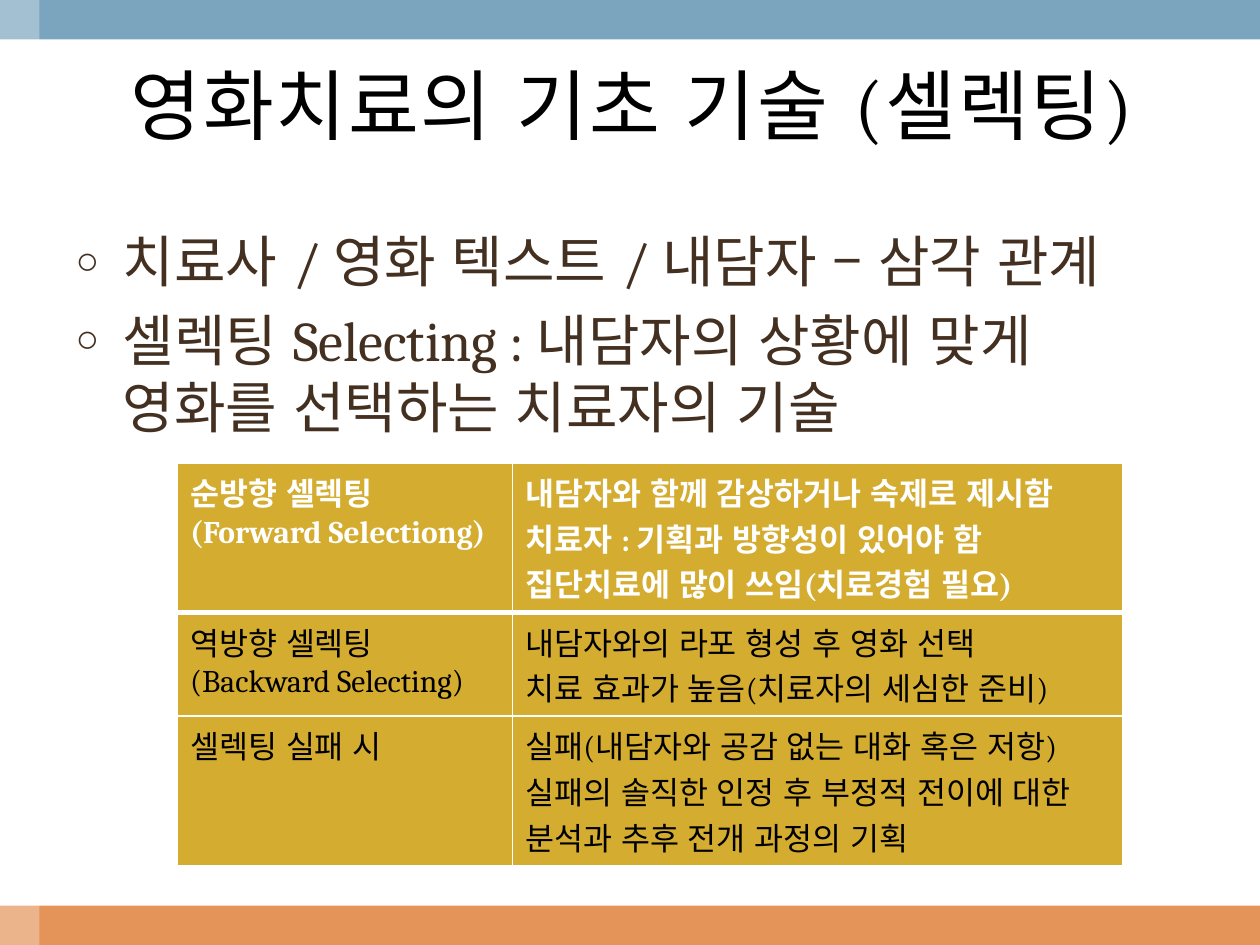
from lxml import etree
from pptx import Presentation
from pptx import util as u
from pptx.dml import color
from pptx.enum import lang, shapes, text
from pptx.oxml import ns

FONT = "Cambria"
WHITE, BLACK, BROWN = "FFFFFF", "000000", "433021"
BLUE, ORANGE, GOLD = "7BA5BE", "E49458", "D4AC30"
WIDTH, HEIGHT, BAND = 720, 540, 22.5


def rgb(value):
    return color.RGBColor.from_string(value)


def child(parent, tag, **attributes):
    return etree.SubElement(parent, ns.qn(tag), attributes)


class Deck:
    def __init__(self, slide):
        self.slide = slide
        self.bands = 0

    def place(self, item, left, top, width, height):
        item.left, item.top = u.Pt(left), u.Pt(top)
        item.width, item.height = u.Pt(width), u.Pt(height)

    def run(self, paragraph, words, size, ink, bold=False):
        run = paragraph.add_run()
        run.text = words
        font = run.font
        font.name, font.size, font.bold = FONT, u.Pt(size), bold
        font.color.rgb = rgb(ink)
        font.language_id = lang.MSO_LANGUAGE_ID.KOREAN
        return run

    def paragraphs(self, frame, lines, size, ink, bold=False):
        for i, words in enumerate(lines):
            paragraph = frame.paragraphs[0] if i == 0 else frame.add_paragraph()
            self.run(paragraph, words, size, ink, bold)

    def band(self, left, top, width, height, fill, opacity=100):
        band = self.slide.shapes.add_shape(
            shapes.MSO_SHAPE.RECTANGLE, *map(u.Pt, (left, top, width, height)))
        band.shadow.inherit = False
        band.line.fill.background()
        band.fill.solid()
        band.fill.fore_color.rgb = rgb(fill)
        if opacity < 100:
            tint = next(band._element.spPr.iter(ns.qn("a:srgbClr")))
            child(tint, "a:alpha", val=str(opacity * 1000))
        # Bands lie behind the placeholders
        self.slide.shapes._spTree.insert(2 + self.bands, band._element)
        self.bands += 1

    def title(self, words, *box):
        title = self.slide.shapes.title
        self.place(title, *box)
        frame = title.text_frame
        frame.auto_size = text.MSO_AUTO_SIZE.NONE
        frame.vertical_anchor = text.MSO_ANCHOR.MIDDLE
        frame.paragraphs[0].alignment = text.PP_ALIGN.CENTER
        run = self.run(frame.paragraphs[0], words, 44, BLACK)
        run.font._element.set("spc", "100")

    def bullets(self, lines, *box):
        body = self.slide.placeholders[1]
        self.place(body, *box)
        frame = body.text_frame
        frame.auto_size = text.MSO_AUTO_SIZE.NONE
        self.paragraphs(frame, lines, 32, BROWN)
        for paragraph in frame.paragraphs:
            props = paragraph._p.get_or_add_pPr()
            props.set("marL", str(u.Pt(27)))
            props.set("indent", str(u.Pt(-27)))
            child(child(props, "a:spcBef"), "a:spcPct", val="20000")
            child(props, "a:buSzPct", val="70000")
            child(props, "a:buChar", char="○")

    def borders(self, cell, **widths):
        props = cell._tc.get_or_add_tcPr()
        for i, (side, width) in enumerate(widths.items()):
            line = etree.Element(ns.qn("a:" + side), w=str(u.Pt(width)))
            child(child(line, "a:solidFill"), "a:srgbClr", val=WHITE)
            props.insert(i, line)

    def table(self, rows, left, top, columns, heights):
        table = self.slide.shapes.add_table(
            len(rows), len(columns),
            *map(u.Pt, (left, top, sum(columns), sum(heights)))).table
        for column, width in zip(table.columns, columns):
            column.width = u.Pt(width)
        for r, (row, height) in enumerate(zip(rows, heights)):
            table.rows[r].height = u.Pt(height)
            header = r == 0
            for c, lines in enumerate(row):
                cell = table.cell(r, c)
                cell.fill.solid()
                cell.fill.fore_color.rgb = rgb(GOLD)
                self.paragraphs(cell.text_frame, lines, 18,
                                WHITE if header else BLACK, header)
                self.borders(cell, lnL=1, lnR=1, lnT=3 if r == 1 else 1,
                             lnB=3 if header else 1)


presentation = Presentation()
presentation.slide_width, presentation.slide_height = u.Pt(WIDTH), u.Pt(HEIGHT)
deck = Deck(presentation.slides.add_slide(presentation.slide_layouts[1]))

# Colour bands with a pale strip down the left edge
deck.band(0, HEIGHT - BAND, WIDTH, BAND, ORANGE)
deck.band(0, 0, WIDTH, BAND, BLUE)
deck.band(0, 0, BAND, HEIGHT, WHITE, opacity=30)

# Title and main points
deck.title("영화치료의 기초 기술 (셀렉팅)", 24, 22.5, 674, 74)
deck.bullets([
    "치료사 / 영화 텍스트 / 내담자 – 삼각 관계",
    "셀렉팅 Selecting : 내담자의 상황에 맞게 영화를 선택하는 치료자의 기술",
], 36, 126, 648, 356.4)

# Kinds of selecting
selecting = [
    (["순방향 셀렉팅", "(Forward Selectiong)"],
     ["내담자와 함께 감상하거나 숙제로 제시함",
      "치료자 : 기획과 방향성이 있어야 함",
      "집단치료에 많이 쓰임(치료경험 필요)"]),
    (["역방향 셀렉팅", "(Backward Selecting)"],
     ["내담자와의 라포 형성 후 영화 선택",
      "치료 효과가 높음(치료자의 세심한 준비)"]),
    (["셀렉팅 실패 시"],
     ["실패(내담자와 공감 없는 대화 혹은 저항)",
      "실패의 솔직한 인정 후 부정적 전이에 대한 분석과 추후 전개 과정의 기획"]),
]
deck.table(selecting, 101.5, 264.5, [191.5, 348.5], [85, 59, 85])

presentation.save("out.pptx")
